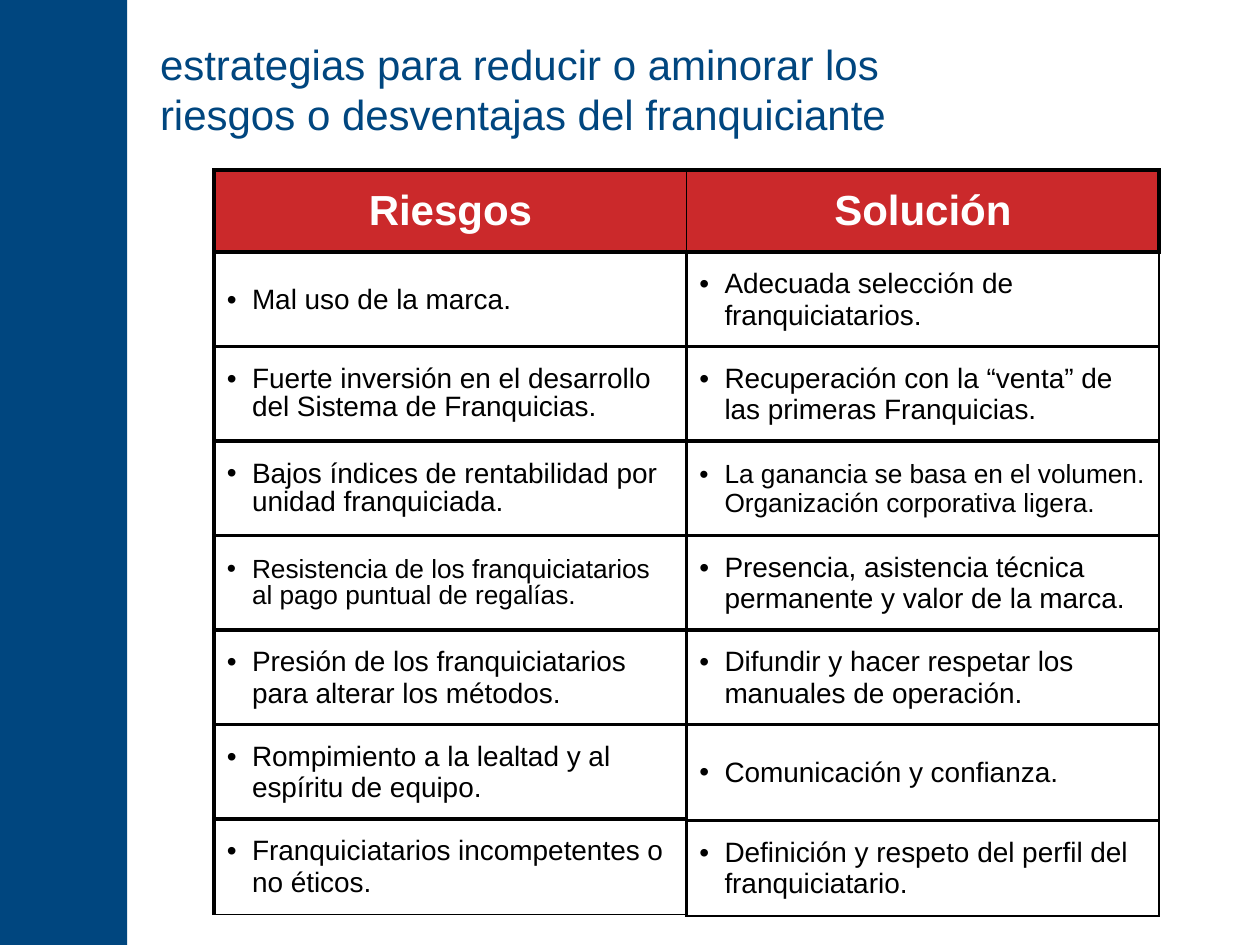
from lxml.etree import SubElement
from pptx import Presentation
from pptx.dml.color import RGBColor
from pptx.enum.shapes import MSO_SHAPE
from pptx.enum.text import MSO_ANCHOR, MSO_AUTO_SIZE, PP_ALIGN
from pptx.oxml.ns import qn
from pptx.util import Inches, Pt

# Content
TITLE = "estrategias para reducir o aminorar los riesgos o desventajas del franquiciante"
HEADERS = ["Riesgos", "Solución"]
RISKS = [  # text, size, line spacing
    ("Mal uso de la marca.", 16, None),
    ("Fuerte inversión en el desarrollo del Sistema de Franquicias.", 16, 0.9),
    ("Bajos índices de rentabilidad por unidad franquiciada.", 16, 0.9),
    ("Resistencia de los franquiciatarios al pago puntual de regalías.", 15, 0.9),
    ("Presión de los franquiciatarios para alterar los métodos.", 16, None),
    ("Rompimiento a la lealtad y al espíritu de equipo.", 16, None),
    ("Franquiciatarios incompetentes o no éticos.", 16, None),
]
SOLUTIONS = [
    ("Adecuada selección de franquiciatarios.", 16, None),
    ("Recuperación con la “venta” de las primeras Franquicias.", 16, None),
    ("La ganancia se basa en el volumen. Organización corporativa ligera.", 15, None),
    ("Presencia, asistencia técnica permanente y valor de la marca.", 16, None),
    ("Difundir y hacer respetar los manuales de operación.", 16, None),
    ("Comunicación y confianza.", 16, None),
    ("Definición y respeto del perfil del franquiciatario.", 16, None),
]
COLORS = {"blue": "00467F", "red": "CB292B", "white": "FFFFFF", "black": "000000"}

# Grid, in inches
LEFT, TOP, COL_W = 1.7, 1.35, 3.75
HEAD_H, ROW_STEP, ROW_H = 0.65, 0.75, 0.76
THICK, THIN = 2.25, 1


def rgb(name):
    return RGBColor.from_string(COLORS[name])


def write(tf, text, size, color, bold=False, align=PP_ALIGN.LEFT, bullet=False, spacing=None):
    p = tf.paragraphs[0]
    if bullet:
        pPr = p._p.get_or_add_pPr()
        pPr.set("marL", str(Inches(0.2)))
        pPr.set("indent", str(-Inches(0.2)))
        SubElement(pPr, qn("a:buFont"), typeface="Arial")
        SubElement(pPr, qn("a:buChar"), char="•")
    p.alignment = align
    if spacing:
        p.line_spacing = spacing
    r = p.add_run()
    r.text = text
    r.font.name, r.font.size, r.font.bold = "Arial", Pt(size), bold
    r.font.color.rgb = rgb(color)


def add_grid(slide, x, y, cols, height):
    frame = slide.shapes.add_table(1, cols, Inches(x), Inches(y),
                                   Inches(cols * COL_W), Inches(height))
    table = frame.table
    table.first_row = table.horz_banding = False
    return table


def style_cell(cell, fill, left=THICK, right=THIN, top=THICK, bottom=THIN):
    tcPr = cell._tc.get_or_add_tcPr()
    for side, width in zip("LRTB", (left, right, top, bottom)):
        ln = SubElement(tcPr, qn("a:ln" + side), w=str(Pt(width)))
        SubElement(SubElement(ln, qn("a:solidFill")), qn("a:srgbClr"), val=COLORS["black"])
    cell.fill.solid()
    cell.fill.fore_color.rgb = rgb(fill)
    cell.vertical_anchor = MSO_ANCHOR.MIDDLE


prs = Presentation()
prs.slide_width, prs.slide_height = Inches(10), Inches(7.5)
s = prs.slides.add_slide(prs.slide_layouts[5])

# Side band
band = s.shapes.add_shape(MSO_SHAPE.RECTANGLE, 0, 0, Inches(1.01), prs.slide_height)
band.shadow.inherit = False
band.fill.solid()
band.fill.fore_color.rgb = rgb("blue")
band.line.fill.background()

# Title
title = s.shapes.title
title.left, title.top, title.width, title.height = map(Inches, (1.17, 0.08, 6.17, 1.25))
tf = title.text_frame
tf.word_wrap, tf.auto_size = True, MSO_AUTO_SIZE.NONE
tf.vertical_anchor = MSO_ANCHOR.MIDDLE
write(tf, TITLE, 24, "blue")

# Header table
header = add_grid(s, LEFT, TOP, len(HEADERS), HEAD_H)
for i, text in enumerate(HEADERS):
    cell = header.cell(0, i)
    first = i == 0
    style_cell(cell, "red", left=THICK if first else THIN,
               right=THIN if first else THICK, bottom=THICK)
    write(cell.text_frame, text, 24, "white", bold=True, align=PP_ALIGN.CENTER)

# One single-cell table for each risk and each solution
for col, entries in enumerate((RISKS, SOLUTIONS)):
    for row, (text, size, spacing) in enumerate(entries):
        y = TOP + HEAD_H + row * ROW_STEP
        if entries is SOLUTIONS and row == len(entries) - 1:
            y += ROW_H - ROW_STEP  # last solution sits just below the one above
        cell = add_grid(s, LEFT + col * COL_W, y, 1, ROW_H).cell(0, 0)
        style_cell(cell, "white")
        write(cell.text_frame, text, size, "black", bullet=True, spacing=spacing)

prs.save("out.pptx")
